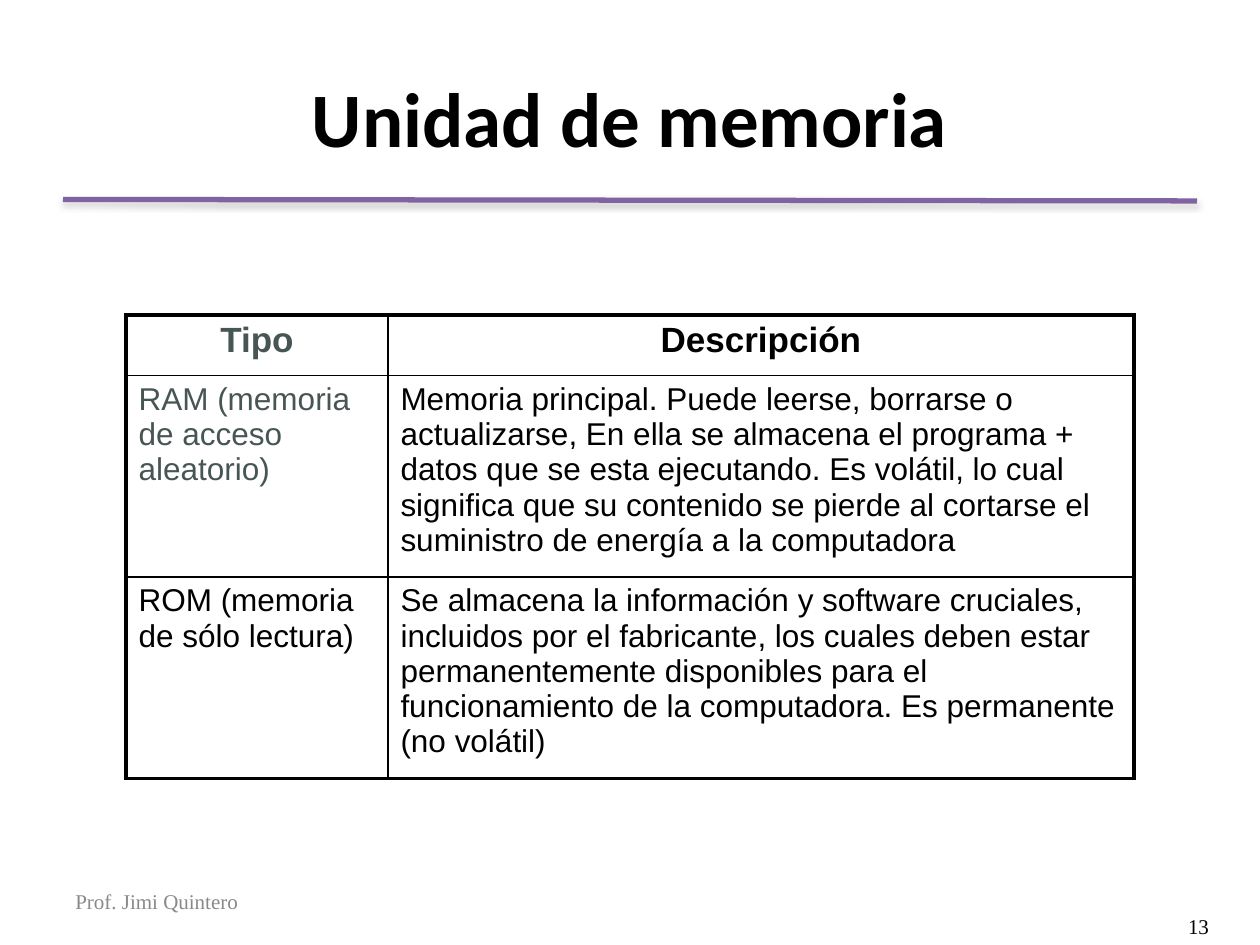
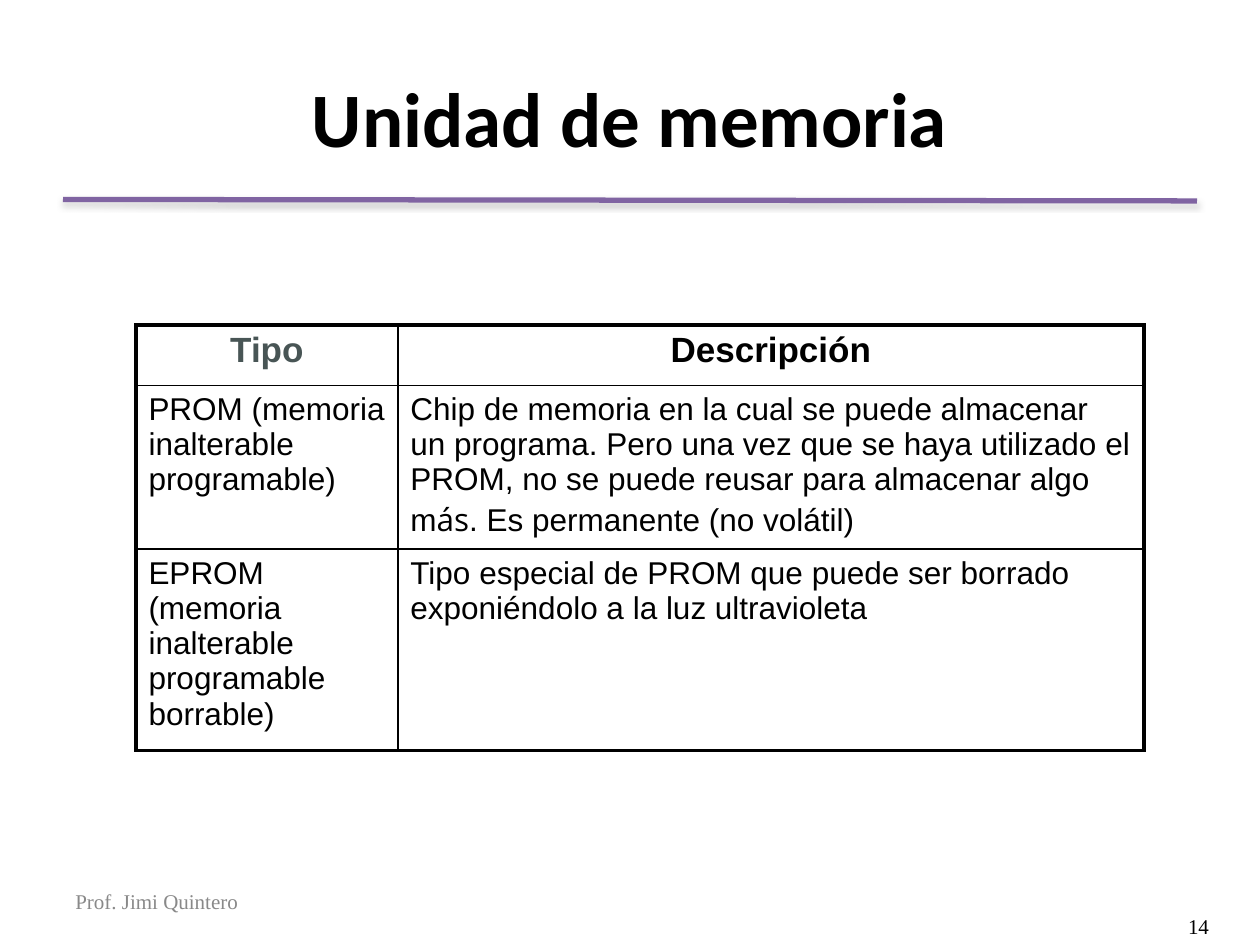
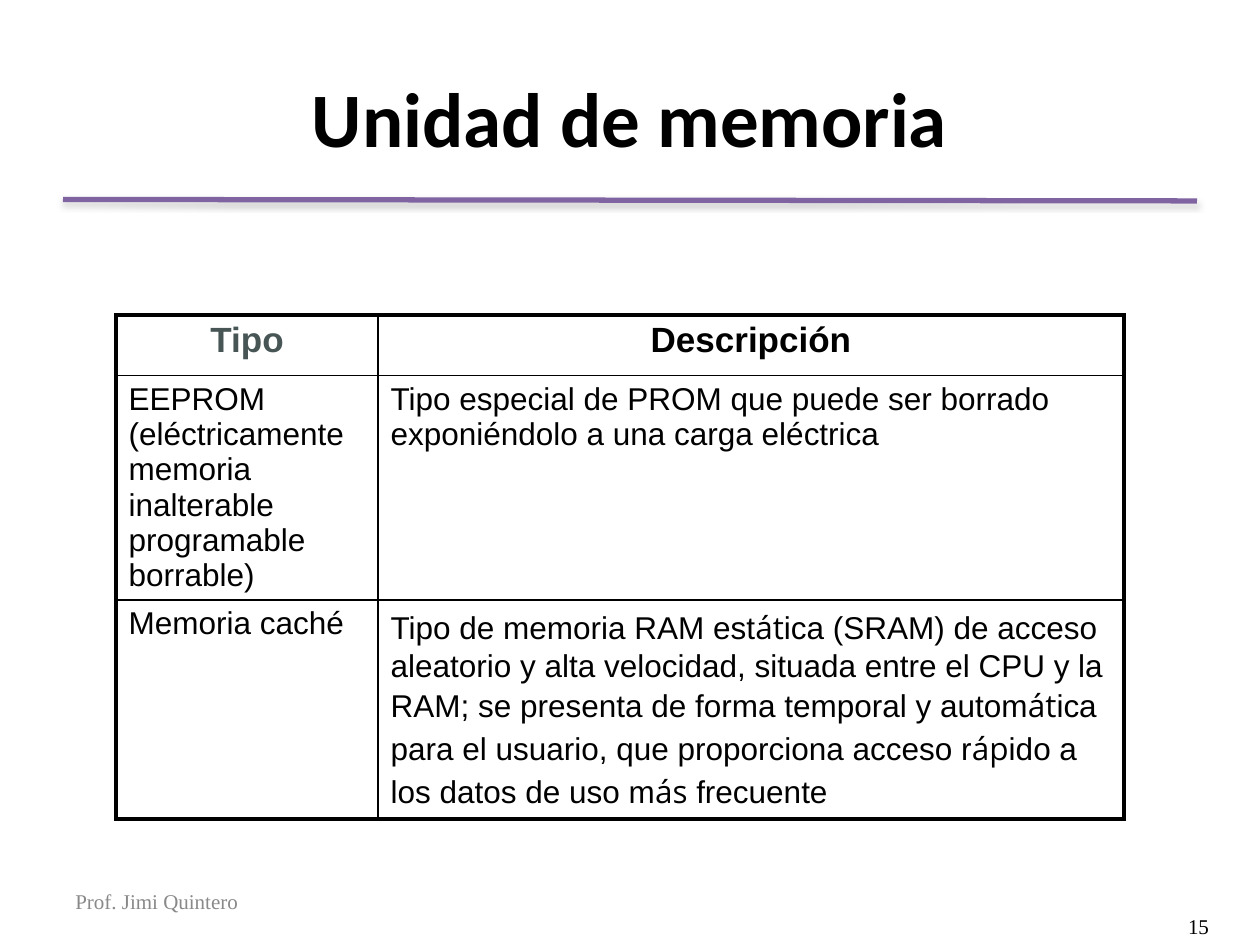
from lxml.etree import SubElement
from pptx import Presentation
from pptx.dml.color import RGBColor
from pptx.enum.shapes import MSO_CONNECTOR
from pptx.enum.text import MSO_ANCHOR, MSO_AUTO_SIZE, PP_ALIGN
from pptx.oxml import parse_xml
from pptx.oxml.ns import nsdecls, qn
from pptx.util import Cm, Pt

BLACK = RGBColor(0x00, 0x00, 0x00)
SLATE = RGBColor(0x48, 0x55, 0x55)
GREY = RGBColor(0x89, 0x89, 0x89)
PURPLE = RGBColor(0x80, 0x64, 0xA2)

BODY_FONT = "Arial"
ACCENT_FONT = "Open Sans"
FOOTER_FONT = "Times New Roman"
OUTER_BORDER = Pt(2.25)
INNER_BORDER = Pt(1)
FIRST_NUMBER = 13
COLUMN_WIDTHS = (5.28, 15.04)
HEADER = ("Tipo", "Descripción")

SLIDES = [
    {
        "box": (2.54, 6.35),
        "row_heights": (1.22, 4.06, 4.06),
        "type_colors": (SLATE, BLACK),
        "rows": [
            ("RAM (memoria de acceso aleatorio)",
             "Memoria principal. Puede leerse, borrarse o actualizarse, En ella se almacena "
             "el programa + datos que se esta ejecutando. Es volátil, lo cual significa que "
             "su contenido se pierde al cortarse el suministro de energía a la computadora"),
            ("ROM (memoria de sólo lectura)",
             "Se almacena la información y software cruciales, incluidos por el fabricante, "
             "los cuales deben estar permanentemente disponibles para el funcionamiento de "
             "la computadora. Es permanente (no volátil)"),
        ],
    },
    {
        "box": (2.74, 6.55),
        "row_heights": (1.22, 3.3, 4.06),
        "type_colors": (BLACK, BLACK),
        "rows": [
            ("PROM (memoria inalterable programable)",
             "Chip de memoria en la cual se puede almacenar un programa. Pero una vez que se "
             "haya utilizado el PROM, no se puede reusar para almacenar algo m|ás|. Es "
             "permanente (no volátil)"),
            ("EPROM (memoria inalterable programable borrable)",
             "Tipo especial de PROM que puede ser borrado exponiéndolo a la luz ultravioleta"),
        ],
    },
    {
        "box": (2.34, 6.35),
        "row_heights": (1.22, 4.5, 4.39),
        "type_colors": (BLACK, BLACK),
        "rows": [
            ("EEPROM (eléctricamente memoria inalterable programable borrable)",
             "Tipo especial de PROM que puede ser borrado exponiéndolo a una carga eléctrica"),
            ("Memoria caché",
             "Tipo de memoria RAM est|át|ica (SRAM) de acceso aleatorio y alta velocidad, "
             "situada entre el CPU y la RAM; se presenta de forma temporal y autom|át|ica "
             "para el usuario, que proporciona acceso r|áp|ido a los datos de uso m|ás| "
             "frecuente"),
        ],
    },
]


def write_text(text_frame, text, size=18, font=BODY_FONT, color=BLACK, bold=False,
               align=PP_ALIGN.LEFT):
    paragraph = text_frame.paragraphs[0]
    paragraph.alignment = align
    for index, part in enumerate(text.split("|")):
        run = paragraph.add_run()
        run.text = part
        run.font.name = ACCENT_FONT if index % 2 else font
        run.font.size = Pt(size)
        run.font.bold = bold
        run.font.color.rgb = color


def add_heading(slide, left, top, width, height):
    title = slide.shapes.title
    title.left, title.top, title.width, title.height = map(Cm, (left, top, width, height))
    title.text_frame.vertical_anchor = MSO_ANCHOR.MIDDLE
    write_text(title.text_frame, "Unidad de memoria", size=44, font="Calibri", bold=True,
               align=PP_ALIGN.CENTER)
    rule_top = top + height + 0.08
    rule = slide.shapes.add_connector(MSO_CONNECTOR.STRAIGHT, Cm(left), Cm(rule_top),
                                      Cm(left + width), Cm(rule_top + 0.03))
    rule.line.color.rgb = PURPLE
    rule.line.width = Pt(3)
    rule.element.spPr.append(parse_xml(
        f'<a:effectLst {nsdecls("a")}>'
        f'<a:outerShdw blurRad="{Pt(3.1)}" dist="{Pt(1.8)}" dir="5400000" rotWithShape="0">'
        '<a:srgbClr val="808080"><a:alpha val="35000"/></a:srgbClr>'
        '</a:outerShdw></a:effectLst>'))


def add_footer(slide, left, top, number):
    author = slide.shapes.add_textbox(Cm(left), Cm(top), Cm(5.92), Cm(1.02))
    author.text_frame.word_wrap = True
    author.text_frame.vertical_anchor = MSO_ANCHOR.MIDDLE
    write_text(author.text_frame, "Prof. Jimi Quintero", size=12, font=FOOTER_FONT, color=GREY)
    page = slide.shapes.add_textbox(Cm(left + 22.43), Cm(top + 0.64), Cm(0.94), Cm(0.76))
    page.text_frame.word_wrap = False
    page.text_frame.auto_size = MSO_AUTO_SIZE.SHAPE_TO_FIT_TEXT
    write_text(page.text_frame, str(number), size=12, font=FOOTER_FONT)


def set_borders(cell, widths):
    properties = cell._tc.get_or_add_tcPr()
    for index, (side, width) in enumerate(widths.items()):
        line = SubElement(properties, qn(f"a:ln{side}"), w=str(width))
        fill = SubElement(line, qn("a:solidFill"))
        SubElement(fill, qn("a:srgbClr"), val=str(BLACK))
        properties.insert(index, line)


def add_memory_table(slide, box, row_heights, type_colors, rows):
    left, top = box
    contents = [HEADER, *rows]
    colors = [SLATE, *type_colors]
    table = slide.shapes.add_table(len(contents), len(HEADER), Cm(left), Cm(top),
                                   Cm(sum(COLUMN_WIDTHS)), Cm(sum(row_heights))).table
    table.first_row = table.horz_banding = False
    for column, width in zip(table.columns, COLUMN_WIDTHS):
        column.width = Cm(width)
    last_row, last_column = len(contents) - 1, len(HEADER) - 1
    for row_index, texts in enumerate(contents):
        table.rows[row_index].height = Cm(row_heights[row_index])
        heading = row_index == 0
        for column_index, text in enumerate(texts):
            cell = table.cell(row_index, column_index)
            cell.fill.background()
            edges = {"L": column_index == 0, "R": column_index == last_column,
                     "T": heading, "B": row_index == last_row}
            set_borders(cell, {side: OUTER_BORDER if outer else INNER_BORDER
                               for side, outer in edges.items()})
            write_text(cell.text_frame, text, size=20 if heading else 18, bold=heading,
                       color=BLACK if column_index else colors[row_index],
                       align=PP_ALIGN.CENTER if heading else PP_ALIGN.LEFT)


def main():
    presentation = Presentation()
    presentation.slide_width, presentation.slide_height = Cm(25.4), Cm(19.05)
    for number, content in enumerate(SLIDES, FIRST_NUMBER):
        slide = presentation.slides.add_slide(presentation.slide_layouts[5])
        add_heading(slide, 1.27, 0.76, 22.86, 3.18)
        add_memory_table(slide, **content)
        add_footer(slide, 1.27, 17.65, number)
    presentation.save("out.pptx")


if __name__ == "__main__":
    main()
